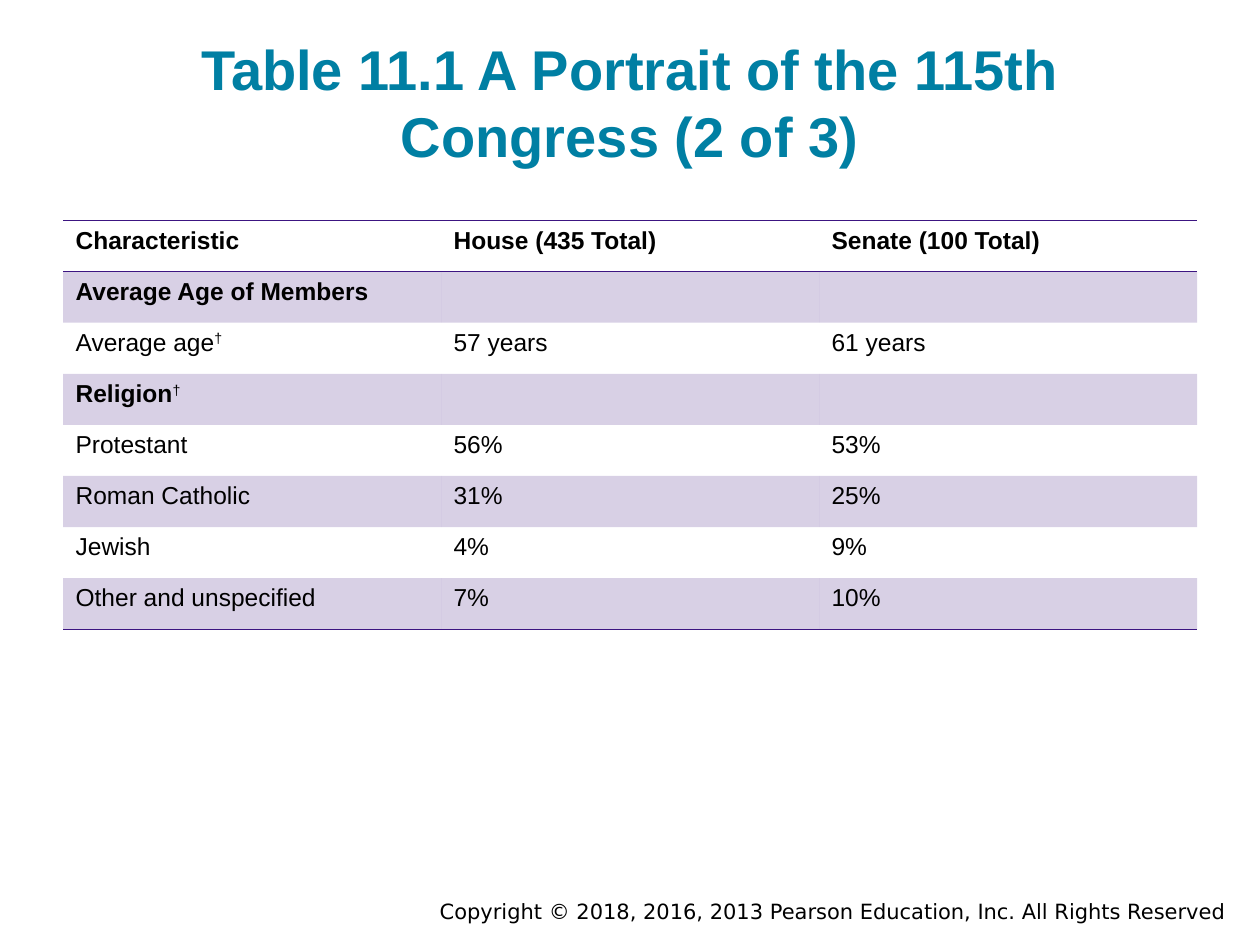
from dataclasses import dataclass

import pptx
import pptx.dml.color
import pptx.enum.text
import pptx.oxml
import pptx.oxml.ns
import pptx.util

Pt = pptx.util.Pt
RGB = pptx.dml.color.RGBColor
Align = pptx.enum.text.PP_ALIGN
Anchor = pptx.enum.text.MSO_ANCHOR
qn = pptx.oxml.ns.qn

TEAL = RGB(0x00, 0x7F, 0xA3)
PURPLE = RGB(0x3C, 0x15, 0x81)
BLACK = RGB(0, 0, 0)
PLAIN_STYLE = "{2D5ABB26-0587-4C30-8999-92F81FD0307C}"
DAGGER = "†"


@dataclass
class Row:
    label: str
    house: str = ""
    senate: str = ""
    bold: bool = False


@dataclass
class Box:
    left: float
    top: float
    width: float
    height: float


ROWS = [
    Row("Characteristic", "House (435 Total)", "Senate (100 Total)", bold=True),
    Row("Average Age of Members", bold=True),
    Row("Average age†", "57 years", "61 years"),
    Row("Religion†", bold=True),
    Row("Protestant", "56%", "53%"),
    Row("Roman Catholic", "31%", "25%"),
    Row("Jewish", "4%", "9%"),
    Row("Other and unspecified", "7%", "10%"),
]


def write(frame, text: str, *, size=14, face="Arial", color=BLACK,
          bold=False, align=Align.LEFT) -> None:
    """Fill the first paragraph, raising a closing dagger as superscript."""
    par = frame.paragraphs[0]
    par.alignment = align
    par.font.size = Pt(size)
    body, mark, _ = text.partition(DAGGER)
    for part in filter(None, (body, mark)):
        run = par.add_run()
        run.text = part
        font = run.font
        font.size, font.name = Pt(size), face
        font.color.rgb = color
        font.bold = bold and part != DAGGER
        if part == DAGGER:
            run._r.get_or_add_rPr().set("baseline", "30000")


def add_text(slide, box: Box, text: str, *, inset=3.6,
             anchor=Anchor.TOP, **style) -> None:
    shape = slide.shapes.add_textbox(
        Pt(box.left), Pt(box.top), Pt(box.width), Pt(box.height))
    frame = shape.text_frame
    frame.word_wrap = True
    frame.vertical_anchor = anchor
    frame.margin_top = frame.margin_bottom = Pt(inset)
    write(frame, text, **style)


def rule(cell, side: str) -> None:
    """Draw a 1 pt border on side T or B of a cell."""
    cell._tc.get_or_add_tcPr().append(pptx.oxml.parse_xml(
        f'<a:ln{side} {pptx.oxml.ns.nsdecls("a")} w="{Pt(1)}"><a:solidFill>'
        f'<a:srgbClr val="{PURPLE}"/></a:solidFill></a:ln{side}>'))


def tint(cell, alpha: int) -> None:
    """Fill a cell with purple at alpha percent."""
    cell.fill.solid()
    cell.fill.fore_color.rgb = PURPLE
    tone = cell._tc.tcPr.find(qn("a:solidFill")).find(qn("a:srgbClr"))
    tone.append(pptx.oxml.parse_xml(
        f'<a:alpha {pptx.oxml.ns.nsdecls("a")} val="{alpha * 1000}"/>'))


def add_grid(slide, box: Box, rows: list[Row]) -> None:
    table = slide.shapes.add_table(
        len(rows), 3, Pt(box.left), Pt(box.top),
        Pt(box.width), Pt(box.height)).table
    table.horz_banding = False
    table._tbl.tblPr.find(qn("a:tableStyleId")).text = PLAIN_STYLE
    last = len(rows) - 1
    for i, row in enumerate(rows):
        table.rows[i].height = Pt(box.height / len(rows))
        for j, text in enumerate((row.label, row.house, row.senate)):
            cell = table.cell(i, j)
            write(cell.text_frame, text, bold=row.bold)
            if i == 0:
                rule(cell, "T")
            if i in (0, last):
                rule(cell, "B")
            if i % 2:
                tint(cell, 20)
            else:
                cell.fill.background()


def main() -> None:
    deck = pptx.Presentation()
    deck.slide_width, deck.slide_height = Pt(720), Pt(540)
    slide = deck.slides.add_slide(deck.slide_layouts[6])
    add_text(slide, Box(144, 509.76, 563.76, 21.6),
             "Copyright © 2018, 2016, 2013 Pearson Education, Inc. All Rights Reserved",
             size=12, face="DejaVu Sans", align=Align.RIGHT)
    add_text(slide, Box(36, 17.28, 648, 86.4),
             "Table 11.1 A Portrait of the 115th Congress (2 of 3)",
             inset=7.2, anchor=Anchor.BOTTOM,
             size=32, color=TEAL, bold=True, align=Align.CENTER)
    add_grid(slide, Box(36, 126, 648, 233.6), ROWS)
    deck.save("out.pptx")


if __name__ == "__main__":
    main()
